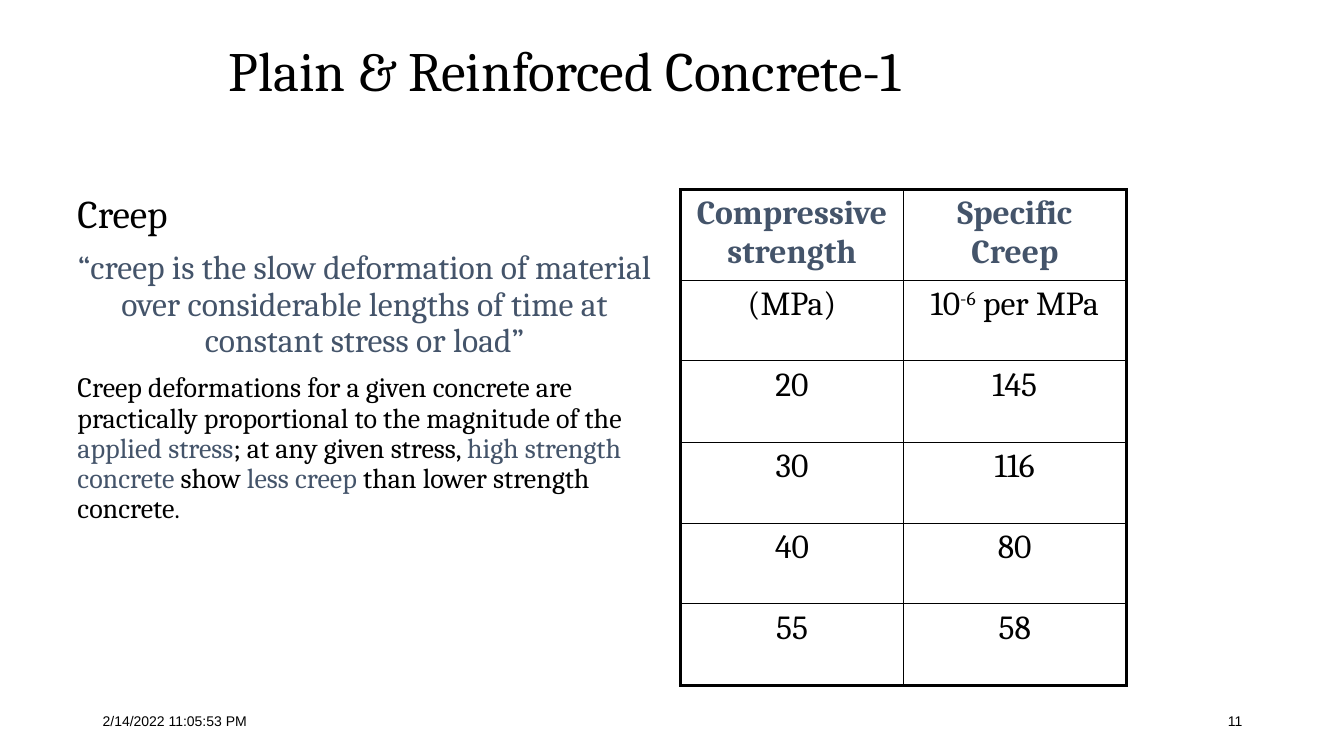
from lxml import etree
from pptx import Presentation
from pptx.dml.color import RGBColor
from pptx.enum.text import MSO_ANCHOR, MSO_AUTO_SIZE, PP_ALIGN
from pptx.oxml.ns import qn
from pptx.util import Inches, Pt

LEFT, CENTER, RIGHT = PP_ALIGN.LEFT, PP_ALIGN.CENTER, PP_ALIGN.RIGHT
TOP, MIDDLE = MSO_ANCHOR.TOP, MSO_ANCHOR.MIDDLE
COLORS = {"ink": "000000", "accent": "44546A"}

TITLE = "Plain & Reinforced Concrete-1"
BODY = [
    (LEFT, [("Creep", 28, "ink")]),
    (CENTER, [("“creep is the slow deformation of material over considerable "
               "lengths of time at constant stress or load”", 24, "accent")]),
    (LEFT, [
        ("Creep deformations for a given concrete are practically "
         "proportional to the magnitude of the ", 20, "ink"),
        ("applied stress", 20, "accent"),
        ("; at any given stress, ", 20, "ink"),
        ("high strength concrete", 20, "accent"),
        (" show ", 20, "ink"),
        ("less creep", 20, "accent"),
        (" than lower strength concrete", 20, "ink"),
        (".", 18, "ink"),
    ]),
]
TABLE = [
    ("Compressive strength", "Specific Creep"),
    ("(MPa)", ("10", "-6", " per MPa")),
    ("20", "145"),
    ("30", "116"),
    ("40", "80"),
    ("55", "58"),
]
ROW_HEIGHTS = [0.9, 0.8, 0.81, 0.8, 0.8, 0.81]
COLUMN_WIDTH = 2.21
TABLE_LEFT, TABLE_TOP = 6.75, 1.88
THIN, THICK = 1, 2.25
FOOTER = [
    ("2/14/2022 11:05:53 PM", 0.92, LEFT),
    ("11", 9.42, RIGHT),
]


def add_span(para, text, size, color="ink", **extra):
    span = para.add_run()
    span.text = text
    look = {"name": "Cambria", "size": Pt(size), "bold": False, **extra}
    for name, value in look.items():
        setattr(span.font, name, value)
    span.font.color.rgb = RGBColor.from_string(COLORS[color])
    return span


def place(box, left, top, width, height):
    box.left, box.top = Inches(left), Inches(top)
    box.width, box.height = Inches(width), Inches(height)


def set_frame(box, anchor):
    frame = box.text_frame
    look = {"word_wrap": True, "auto_size": MSO_AUTO_SIZE.NONE, "vertical_anchor": anchor}
    for name, value in look.items():
        setattr(frame, name, value)
    return frame


def add_box(page, left, top, width, height, anchor):
    box = page.shapes.add_textbox(Inches(left), Inches(top), Inches(width), Inches(height))
    return set_frame(box, anchor)


def set_borders(cell, widths):
    properties = cell._tc.get_or_add_tcPr()
    for side, width in widths.items():
        line = etree.SubElement(properties, qn("a:ln" + side), w=str(Pt(width)))
        fill = etree.SubElement(line, qn("a:solidFill"))
        etree.SubElement(fill, qn("a:srgbClr"), val=COLORS["ink"])


def add_title(page):
    title = page.shapes.title
    place(title, 2.17, 0.33, 8.25, 0.8)
    para = set_frame(title, MIDDLE).paragraphs[0]
    para.alignment, para.line_spacing = LEFT, 0.9
    add_span(para, TITLE, 39.6)


def add_body(page):
    frame = add_box(page, 0.67, 1.88, 5.89, 4.82, TOP)
    for index, (alignment, spans) in enumerate(BODY):
        para = frame.add_paragraph() if index else frame.paragraphs[0]
        look = {"alignment": alignment, "line_spacing": 0.9, "space_before": Pt(10)}
        for name, value in look.items():
            setattr(para, name, value)
        for text, size, color in spans:
            add_span(para, text, size, color)


def add_creep_table(page):
    rows, columns = len(TABLE), len(TABLE[0])
    table = page.shapes.add_table(
        rows, columns, Inches(TABLE_LEFT), Inches(TABLE_TOP),
        Inches(COLUMN_WIDTH * columns), Inches(sum(ROW_HEIGHTS))).table
    table.first_row = table.horz_banding = False
    for column in table.columns:
        column.width = Inches(COLUMN_WIDTH)
    for r, values in enumerate(TABLE):
        table.rows[r].height = Inches(ROW_HEIGHTS[r])
        header = r == 0
        for c, value in enumerate(values):
            cell = table.cell(r, c)
            set_borders(cell, {
                "L": THICK if c == 0 else THIN,
                "R": THICK if c == columns - 1 else THIN,
                "T": THICK if header else THIN,
                "B": THICK if r == rows - 1 else THIN,
            })
            cell.fill.background()
            para = cell.text_frame.paragraphs[0]
            para.alignment = CENTER
            parts = (value,) if isinstance(value, str) else value
            for index, text in enumerate(parts):
                span = add_span(para, text, 24, "accent" if header else "ink", bold=header)
                if index == 1:
                    span._r.get_or_add_rPr().set("baseline", "30000")


def add_footer(page):
    for text, left, alignment in FOOTER:
        para = add_box(page, left, 6.95, 3, 0.4, MIDDLE).paragraphs[0]
        para.alignment = alignment
        add_span(para, text, 10, name="Arial")


def main():
    deck = Presentation()
    deck.slide_width, deck.slide_height = Inches(13.33), Inches(7.5)
    page = deck.slides.add_slide(deck.slide_layouts[5])
    add_title(page)
    add_body(page)
    add_creep_table(page)
    add_footer(page)
    deck.save("out.pptx")


if __name__ == "__main__":
    main()
